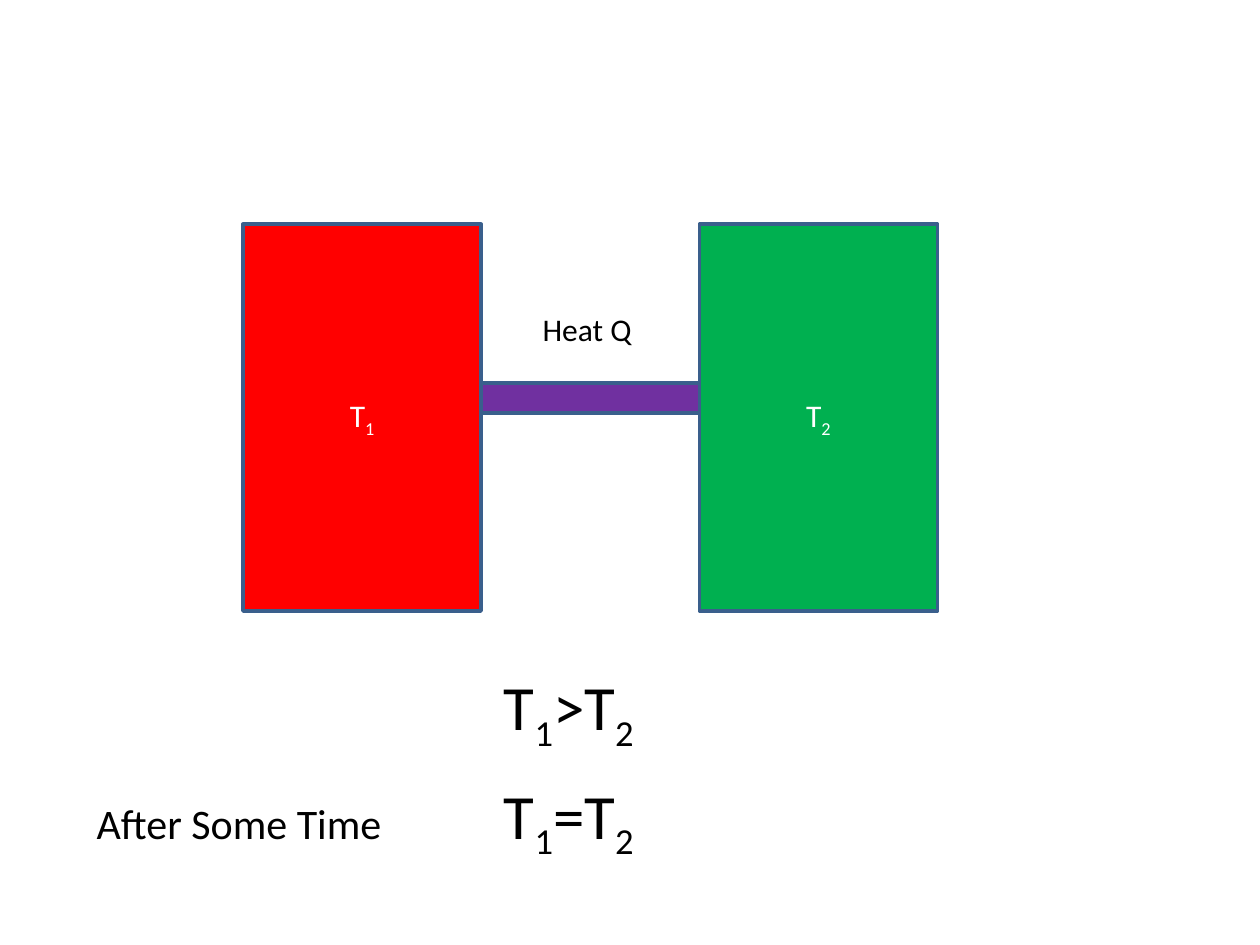
from lxml.etree import SubElement
from pptx import Presentation
from pptx.dml.color import RGBColor
from pptx.enum.shapes import MSO_SHAPE
from pptx.enum.text import MSO_ANCHOR, MSO_AUTO_SIZE, PP_ALIGN
from pptx.oxml.ns import qn
from pptx.util import Cm, Pt

RED = RGBColor(0xFF, 0x00, 0x00)
GREEN = RGBColor(0x00, 0xB0, 0x50)
PURPLE = RGBColor(0x70, 0x30, 0xA0)
OUTLINE = RGBColor(0x3A, 0x5F, 0x8C)
WHITE = RGBColor(0xFF, 0xFF, 0xFF)
BLACK = RGBColor(0x00, 0x00, 0x00)

# Runs are (text, size in points, is subscript)
BODIES = [
    (RED, [("T", 18, False), ("1", 18, True)]),
    (GREEN, [("T", 18, False), ("2", 18, True)]),
]


def relation(sign):
    return [("T", 36, False), ("1", 36, True), (sign + "T", 36, False), ("2", 36, True)]


# Left, top, width, height in cm, then the runs
LABELS = [
    (8.51, 13.34, 8.2, 1.8, [("\t", 36, False)] + relation(">")),
    (1.7, 15.52, 19, 1.8, [("After Some Time\t", 24, False)] + relation("=")),
    (10.69, 6.12, 2.39, 1.02, [("Heat Q", 18, False)]),
]

BODY_LEFT, BODY_TOP, BODY_WIDTH, BODY_HEIGHT = 4.9, 4.52, 4.8, 7.8
ROD_TOP, ROD_LENGTH, ROD_HEIGHT = 7.72, 4.4, 0.61
RELATION_LEFT = 10.16
INSET = 0.25


def write_runs(paragraph, runs, color):
    for text, size, subscript in runs:
        run = paragraph.add_run()
        run.text = text
        run.font.name = "Calibri"
        run.font.size = Pt(size)
        run.font.color.rgb = color
        if subscript:
            run._r.get_or_add_rPr().set("baseline", "-25000")


def add_block(slide, left, top, width, height, color):
    block = slide.shapes.add_shape(
        MSO_SHAPE.RECTANGLE, Cm(left), Cm(top), Cm(width), Cm(height))
    block.shadow.inherit = False
    block.fill.solid()
    block.fill.fore_color.rgb = color
    block.line.color.rgb = OUTLINE
    block.line.width = Pt(2)
    return block


def add_label(slide, left, top, width, height, runs):
    """Add a text box whose tab stop lies on the shared relation column."""
    frame = slide.shapes.add_textbox(Cm(left), Cm(top), Cm(width), Cm(height)).text_frame
    frame.word_wrap = True
    frame.auto_size = MSO_AUTO_SIZE.SHAPE_TO_FIT_TEXT
    paragraph = frame.paragraphs[0]
    if any("\t" in text for text, _, _ in runs):
        tabs = SubElement(paragraph._p.get_or_add_pPr(), qn("a:tabLst"))
        stop = Cm(RELATION_LEFT - left - INSET)
        SubElement(tabs, qn("a:tab"), pos=str(int(stop)), algn="l")
    write_runs(paragraph, runs, BLACK)


def main():
    presentation = Presentation()
    presentation.slide_width, presentation.slide_height = Cm(25.4), Cm(19.05)
    slide = presentation.slides.add_slide(presentation.slide_layouts[6])

    for index, (color, runs) in enumerate(BODIES):
        left = BODY_LEFT + index * (BODY_WIDTH + ROD_LENGTH)
        body = add_block(slide, left, BODY_TOP, BODY_WIDTH, BODY_HEIGHT, color)
        body.text_frame.vertical_anchor = MSO_ANCHOR.MIDDLE
        paragraph = body.text_frame.paragraphs[0]
        paragraph.alignment = PP_ALIGN.CENTER
        write_runs(paragraph, runs, WHITE)

    add_block(slide, BODY_LEFT + BODY_WIDTH, ROD_TOP, ROD_LENGTH, ROD_HEIGHT, PURPLE)
    for label in LABELS:
        add_label(slide, *label)

    presentation.save("out.pptx")


if __name__ == "__main__":
    main()
